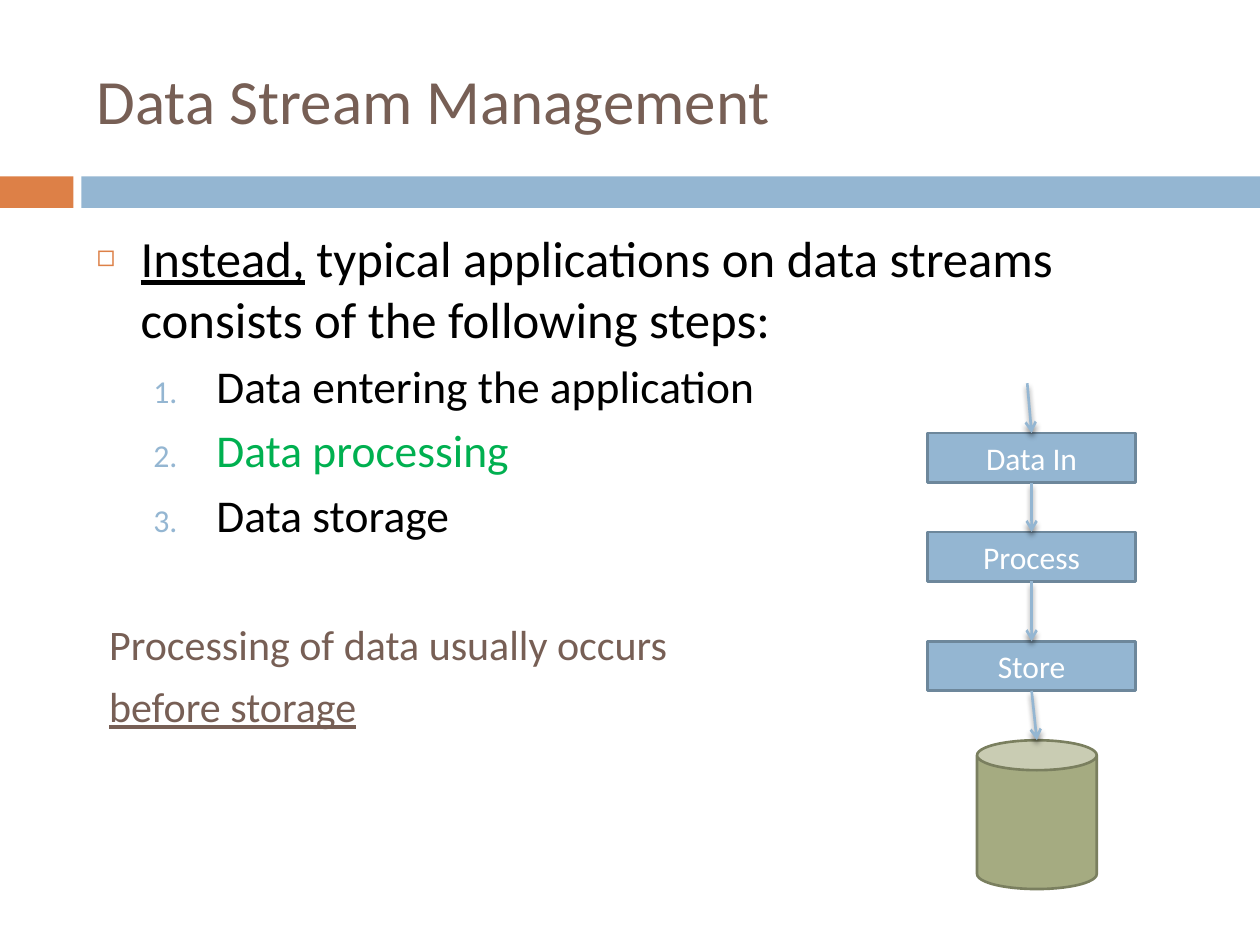
from dataclasses import dataclass

from lxml import etree
from pptx import Presentation
from pptx.dml.color import RGBColor
from pptx.enum.shapes import MSO_CONNECTOR, MSO_SHAPE
from pptx.enum.text import MSO_ANCHOR, MSO_AUTO_SIZE, PP_ALIGN
from pptx.oxml.ns import qn
from pptx.util import Pt

RECTANGLE = MSO_SHAPE.RECTANGLE
CAN = MSO_SHAPE.CAN
STRAIGHT = MSO_CONNECTOR.STRAIGHT
MIDDLE, TOP = MSO_ANCHOR.MIDDLE, MSO_ANCHOR.TOP
LEFT, CENTER = PP_ALIGN.LEFT, PP_ALIGN.CENTER
NO_AUTOFIT = MSO_AUTO_SIZE.NONE


@dataclass(frozen=True)
class Theme:
    font: str = "Calibri"
    orange: str = "DD8047"
    blue: str = "94B6D2"
    blue_edge: str = "6D879B"
    olive: str = "A5AB81"
    olive_edge: str = "7A7F5F"
    brown: str = "775F55"
    green: str = "00B050"
    black: str = "000000"
    white: str = "FFFFFF"
    title_size: float = 36
    lead_size: float = 29
    step_size: float = 26
    note_size: float = 24
    box_size: float = 18
    line_width: float = 1.5


THEME = Theme()


def format_span(span, size, color, underline=False):
    span.font.name = THEME.font
    span.font.size = Pt(size)
    span.font.color.rgb = RGBColor.from_string(color)
    span.font.underline = underline


def add_child(parent, tag, **attributes):
    return etree.SubElement(parent, qn(tag), **attributes)


def set_marker(para, indent, hanging, tag, color=None, percent=None, **marker):
    properties = para._p.get_or_add_pPr()
    properties.set("marL", str(Pt(indent)))
    properties.set("indent", str(-Pt(hanging)))
    if color:
        add_child(add_child(properties, "a:buClr"), "a:srgbClr", val=color)
        add_child(properties, "a:buSzPct", val=str(percent * 1000))
        add_child(properties, "a:buFont", typeface=THEME.font)
    add_child(properties, tag, **marker)


def place(shape, left, top, width, height, anchor):
    shape.left, shape.top = Pt(left), Pt(top)
    shape.width, shape.height = Pt(width), Pt(height)
    frame = shape.text_frame
    frame.word_wrap = True
    frame.auto_size = NO_AUTOFIT
    frame.vertical_anchor = anchor


def add_block(slide, kind, left, top, width, height, fill, edge=None):
    block = slide.shapes.add_shape(kind, Pt(left), Pt(top), Pt(width), Pt(height))
    block.shadow.inherit = False
    block.fill.solid()
    block.fill.fore_color.rgb = RGBColor.from_string(fill)
    if edge:
        block.line.color.rgb = RGBColor.from_string(edge)
        block.line.width = Pt(THEME.line_width)
    else:
        block.line.fill.background()
    return block


def add_stage(slide, label, top):
    box = add_block(slide, RECTANGLE, 530, top, 119, 28.3, THEME.blue, THEME.blue_edge)
    frame = box.text_frame
    frame.vertical_anchor = MIDDLE
    frame.text = label
    para = frame.paragraphs[0]
    para.alignment = CENTER
    format_span(para.runs[0], THEME.box_size, THEME.white)
    return box


def add_arrow(slide, start, end):
    arrow = slide.shapes.add_connector(STRAIGHT, *start, *end)
    arrow.line.color.rgb = RGBColor.from_string(THEME.blue)
    arrow.line.width = Pt(THEME.line_width)
    add_child(arrow.line._get_or_add_ln(), "a:tailEnd", type="arrow")
    effects = add_child(arrow._element.spPr, "a:effectLst")
    shadow = add_child(effects, "a:outerShdw", blurRad=str(Pt(3)), dist=str(Pt(2.4)),
                       dir="5400000", rotWithShape="0")
    color = add_child(shadow, "a:srgbClr", val=THEME.black)
    add_child(color, "a:alpha", val="45000")


def top_center(shape):
    return shape.left + shape.width // 2, shape.top


def bottom_center(shape):
    return shape.left + shape.width // 2, shape.top + shape.height


def fill_title(title):
    place(title, 48, 18, 642, 78, MIDDLE)
    title.text_frame.text = "Data Stream Management"
    para = title.text_frame.paragraphs[0]
    para.alignment = LEFT
    format_span(para.runs[0], THEME.title_size, THEME.brown)


def fill_lead(para):
    set_marker(para, 25.2, 25.2, "a:buChar", THEME.orange, 60, char="◻")
    para.space_before = Pt(0)
    for text, underline in (
        ("Instead,", True),
        (" typical applications on data streams consists of the following steps:", False),
    ):
        span = para.add_run()
        span.text = text
        format_span(span, THEME.lead_size, THEME.black, underline)


def add_step(frame, text, color):
    para = frame.add_paragraph()
    para.text = text
    para.level = 1
    set_marker(para, 68.4, 36, "a:buAutoNum", THEME.blue, 70, type="arabicPeriod")
    para.space_before = Pt(5.5)
    format_span(para.runs[0], THEME.step_size, color)


def add_note(frame, text, gap, underline):
    para = frame.add_paragraph()
    para.text = text
    set_marker(para, 43.2, 36, "a:buNone")
    para.space_before = Pt(gap)
    format_span(para.runs[0], THEME.note_size, THEME.brown, underline)


def fill_body(body):
    place(body, 48, 126, 642, 354, TOP)
    frame = body.text_frame
    fill_lead(frame.paragraphs[0])
    for text, color in (
        ("Data entering the application", THEME.black),
        ("Data processing", THEME.green),
        ("Data storage", THEME.black),
    ):
        add_step(frame, text, color)
    add_note(frame, "Processing of data usually occurs", 44, False)
    add_note(frame, "before storage", 7, True)


def add_pipeline(slide):
    stages = [add_stage(slide, label, top) for label, top in (
        ("Data In", 247.5), ("Process", 304), ("Store", 366.5))]
    storage = add_block(slide, CAN, 558.3, 423, 68.4, 85, THEME.olive, THEME.olive_edge)
    chain = stages + [storage]
    add_arrow(slide, (Pt(587), Pt(219)), top_center(chain[0]))
    for upper, lower in zip(chain, chain[1:]):
        add_arrow(slide, bottom_center(upper), top_center(lower))


def main():
    deck = Presentation()
    deck.slide_width, deck.slide_height = Pt(720), Pt(540)
    slide = deck.slides.add_slide(deck.slide_layouts[1])
    add_block(slide, RECTANGLE, 0, 100.8, 42, 18, THEME.orange)
    add_block(slide, RECTANGLE, 46.5, 100.8, 673.5, 18, THEME.blue)
    fill_title(slide.shapes.title)
    fill_body(slide.placeholders[1])
    add_pipeline(slide)
    deck.save("out.pptx")


if __name__ == "__main__":
    main()
